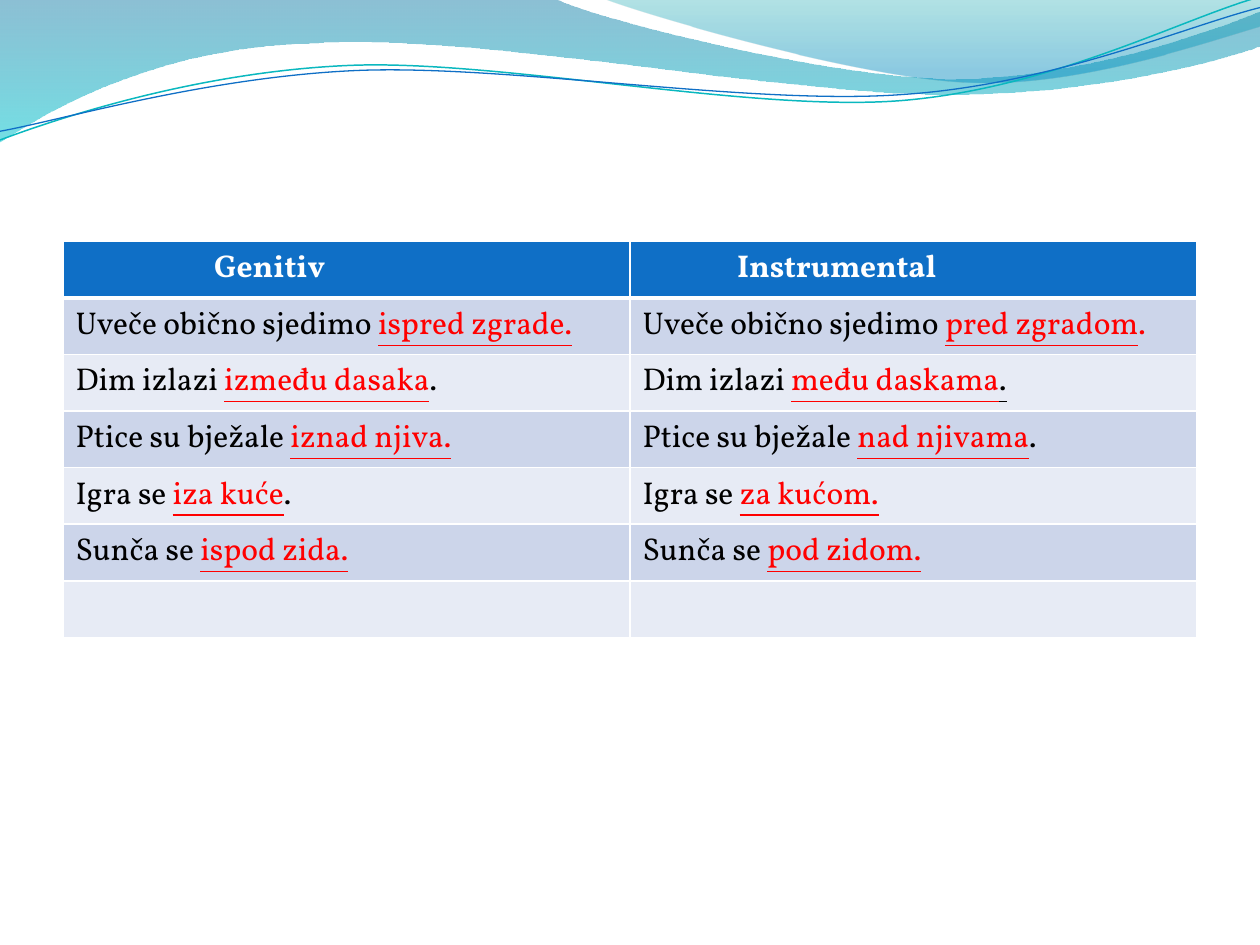
from math import cos, radians, sin

from lxml import etree
from pptx import Presentation
from pptx.dml.color import RGBColor
from pptx.oxml.ns import qn
from pptx.util import Pt

FONT = "Vollkorn"
SIZE = Pt(18)
WHITE = RGBColor(0xFF, 0xFF, 0xFF)
BLACK = RGBColor(0, 0, 0)
RED = RGBColor(0xFF, 0, 0)
BLUE = RGBColor(0x0F, 0x6F, 0xC6)
TEAL = RGBColor(0x0A, 0xB8, 0xBF)
DARK = RGBColor(0xCC, 0xD5, 0xEA)
LIGHT = RGBColor(0xE7, 0xEB, 0xF5)

# Each shape has a box (left, top, width, height) and steps, in points:
# a pair is a straight step, six numbers are a cubic one.
# Stops are position, colour and opacity in percent.
WAVES = [
    ((-0.7, -0.7, 721.4, 82.1),
     [(0, 0), (317, -0.7), (343, 12, 478, 45, 546, 45),
      (614, 45, 690, 19, 720, 6.5), (720.7, 26),
      (708, 32, 626, 55, 537, 54), (448, 54, 275, 20, 185, 24.5),
      (93, 26, 33, 60, -0.7, 81.4), (0, 0)],
     [(0, RGBColor(0, 0x74, 0xA1), 45), (1, RGBColor(0, 0xC6, 0xCF), 55)]),
    ((345, -0.7, 375, 50.4),
     [(345, -0.7), (366.5, 8, 491, 44.6, 553.7, 46.8),
      (616.3, 49.7, 692, 23, 720, 15), (720, 0), (345, -0.7)],
     [(0, RGBColor(0, 0xA1, 0xA9), 30), (0.8, RGBColor(0, 0x8B, 0xBF), 45)]),
]
TILT = -2.7
LINES = [
    ((-1.4, 15.8, 721.4, 51.1),
     [(0, 80), (34.6, 67, 113.8, 41, 199.4, 37.4),
      (284.4, 33.8, 427, 64, 513.4, 57.6),
      (599.8, 51, 675.4, 10.8, 718.6, -1.4)], TEAL, 0.85),
    ((-1.4, 21.6, 722.2, 41.8),
     [(0, 75), (33.8, 69, 118, 44, 203.8, 40.3),
      (290, 36.7, 429.8, 60.5, 516.2, 54),
      (602, 48.2, 677.5, 15, 720, 4.3)], BLUE, 0.75),
]

# Column title and its left margin
HEADS = [("Genitiv", 86.4), ("Instrumental", 61.2)]

# Run styles: colour, underline
PLAIN = (BLACK, False)
MARK = (RED, True)
STOP = (".", PLAIN)
ROWS = [
    ("Uveče obično sjedimo ", [("ispred zgrade.", MARK)],
     [("pred zgradom", MARK), (".", (RED, False))]),
    ("Dim izlazi ", [("između dasaka", MARK), STOP],
     [("među daskama", MARK), (".", (BLACK, True))]),
    ("Ptice su bježale ", [("iznad njiva.", MARK)],
     [("nad njivama", MARK), STOP]),
    ("Igra se ", [("iza kuće", MARK), STOP], [("za kućom.", MARK)]),
    ("Sunča se ", [("ispod zida.", MARK)], [("pod zidom.", MARK)]),
]


def turn(step, box, angle):
    """Turn the points of a step about the middle of the box."""
    c, s = cos(radians(angle)), sin(radians(angle))
    left, top, wide, high = box
    mid_x, mid_y = left + wide / 2, top + high / 2
    out = []
    for x, y in zip(step[::2], step[1::2]):
        x, y = x - mid_x, y - mid_y
        out += [mid_x + x * c - y * s, mid_y + x * s + y * c]
    return out


def add_curve(slide, box, steps, close=False):
    """Draw the steps in a freeform that spans the box."""
    left, top, wide, high = box
    pen = slide.shapes.build_freeform(Pt(left), Pt(top))
    pen.add_line_segments([(Pt(left + wide), Pt(top + high))], close=False)
    shape = pen.convert_to_shape()
    shape.shadow.inherit = False
    route = next(shape._element.iter(qn("a:path")))
    for part in list(route):
        route.remove(part)
    for i, step in enumerate(steps):
        kind = "cubicBezTo" if len(step) == 6 else "lnTo"
        part = etree.SubElement(route, qn("a:" + (kind if i else "moveTo")))
        for x, y in zip(step[::2], step[1::2]):
            etree.SubElement(part, qn("a:pt"),
                             x=str(Pt(x - left)), y=str(Pt(y - top)))
    if close:
        etree.SubElement(route, qn("a:close"))
    return shape


def add_wave(slide, box, steps, stops):
    shape = add_curve(slide, box, steps, True)
    shape.line.fill.background()
    shape.fill.gradient()
    shape.fill.gradient_angle = 270
    for stop, (place, color, alpha) in zip(shape.fill.gradient_stops, stops):
        stop.position = place
        stop.color.rgb = color
    tags = shape.fill._xPr.iter(qn("a:srgbClr"))
    for tag, (place, color, alpha) in zip(tags, stops):
        etree.SubElement(tag, qn("a:alpha"), val=str(alpha * 1000))


def add_line(slide, box, steps, color, width):
    shape = add_curve(slide, box, [turn(step, box, -TILT) for step in steps])
    shape.rotation = TILT
    shape.fill.background()
    shape.line.color.rgb = color
    shape.line.width = Pt(width)


def style_cell(cell, fill, base=1):
    """Give a cell white borders, then its fill."""
    props = cell._tc.get_or_add_tcPr()
    for side, width in (("L", 1), ("R", 1), ("T", 1), ("B", base)):
        edge = etree.SubElement(props, qn("a:ln" + side), w=str(Pt(width)))
        solid = etree.SubElement(edge, qn("a:solidFill"))
        etree.SubElement(solid, qn("a:srgbClr"), val=str(WHITE))
    cell.fill.solid()
    cell.fill.fore_color.rgb = fill


def add_run(cell, text, color, under=False, bold=False):
    run = cell.text_frame.paragraphs[0].add_run()
    run.text = text
    font = run.font
    font.name, font.size = FONT, SIZE
    font.bold, font.underline = bold, under
    font.color.rgb = color


def size_blank(cell):
    """Let an empty cell keep the height of a text line."""
    para = cell.text_frame.paragraphs[0]._p
    end = etree.SubElement(para, qn("a:endParaRPr"), sz=str(SIZE.centipoints))
    etree.SubElement(end, qn("a:latin"), typeface=FONT)


def add_cases(slide):
    count = len(ROWS) + 2
    table = slide.shapes.add_table(
        count, 2, Pt(36), Pt(138), Pt(648), Pt(29.2 * count)).table
    for col, (title, margin) in enumerate(HEADS):
        head = table.cell(0, col)
        style_cell(head, BLUE, 3)
        head.margin_left = Pt(margin)
        add_run(head, title, WHITE, bold=True)
        for row in range(1, count):
            style_cell(table.cell(row, col), DARK if row % 2 else LIGHT)
        for row, (lead, *ends) in enumerate(ROWS, 1):
            cell = table.cell(row, col)
            add_run(cell, lead, *PLAIN)
            for text, style in ends[col]:
                add_run(cell, text, *style)
        size_blank(table.cell(count - 1, col))


def main():
    deck = Presentation()
    deck.slide_width, deck.slide_height = Pt(720), Pt(540)
    slide = deck.slides.add_slide(deck.slide_layouts[6])
    for wave in WAVES:
        add_wave(slide, *wave)
    for line in LINES:
        add_line(slide, *line)
    add_cases(slide)
    deck.save("out.pptx")


if __name__ == "__main__":
    main()
